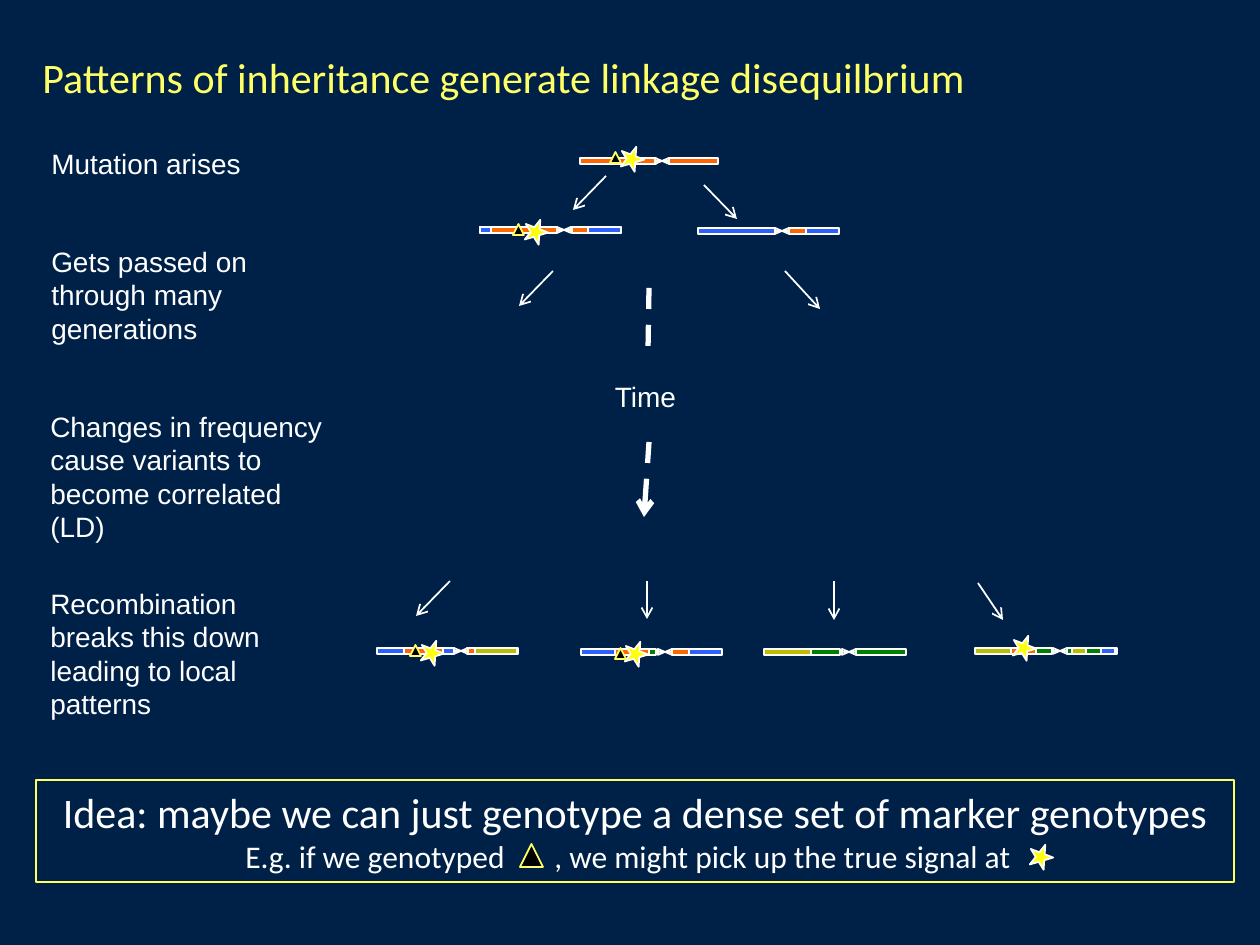
from lxml import etree
from pptx import Presentation
from pptx import util as u
from pptx.dml.color import RGBColor
from pptx.enum import dml, shapes, text
from pptx.oxml.ns import qn

PX = u.Inches(1) / 126
COLORS = {
    "navy": "002147", "white": "FFFFFF", "yellow": "FFFF65", "title": "FFFF66",
    "star": "FFFF0D", "black": "000000", "orange": "FF6600", "blue": "2C60FF",
    "olive": "BBBE00", "green": "008000",
}

TITLE = "Patterns of inheritance generate linkage disequilbrium"
STEPS = [
    ("Mutation arises", (39, 140, 217, 47)),
    ("Gets passed on through many generations", (39, 238, 300, 115)),
    ("Changes in frequency cause variants to become correlated (LD)", (38, 403, 300, 149)),
    ("Recombination breaks this down leading to local patterns", (38, 580, 300, 149)),
]
TIME = ("Time", (602, 373, 87, 47))
IDEA = [
    ("Idea: maybe we can just genotype a dense set of marker genotypes", 24),
    ("\tE.g. if we genotyped\t, we might pick up the true signal at", 18),
]
IDEA_BOX = (36, 780, 1198, 102)
IDEA_TABS = [197, 506]

# top, centromere left, centromere colour, segments as (left, width, colour)
CHROMOSOMES = [
    (158, 655, "orange", [(580, 76, "orange"), (669, 49, "orange")]),
    (227, 557, "orange", [(480, 77, "orange"), (572, 49, "orange"),
                          (588, 33, "blue"), (480, 11, "blue")]),
    (228, 775, "orange", [(789, 49, "orange"), (806, 33, "blue"), (698, 77, "blue")]),
    (648, 454, "orange", [(377, 77, "blue"), (467, 49, "orange"), (404, 39, "orange"),
                          (485, 33, "blue"), (475, 42, "olive")]),
    (649, 658, "orange", [(635, 21, "green"), (615, 34, "orange"), (672, 49, "orange"),
                          (689, 33, "blue"), (581, 34, "blue")]),
    (649, 842, "green", [(764, 48, "olive"), (811, 29, "green"), (856, 50, "green")]),
    (648, 1053, "green", [(975, 48, "olive"), (1023, 29, "green"), (1067, 50, "green"),
                          (1011, 25, "orange"), (1072, 14, "olive"), (1101, 14, "blue")]),
]
BAR_HEIGHT = 6
CENTROMERE = (7, 3)
ARROWS = [
    (606, 176, 573, 210), (704, 185, 737, 219), (553, 271, 519, 306),
    (785, 271, 820, 309), (450, 581, 416, 616), (647, 581, 647, 619),
    (834, 581, 834, 620), (978, 583, 1003, 620),
]
TIME_LINES = [((649, 288, 648, 353), False), ((649, 442, 644, 517), True)]
STARS = [(620, 146), (524, 219), (420, 640), (624, 641), (1012, 635), (1029, 844)]
STAR_SIZE = 24
MARKERS = [(610, 152, 11), (513, 224, 11), (410, 645, 11), (615, 648, 11), (520, 844, 23)]


def emu(*lengths):
    return [u.Emu(round(length * PX)) for length in lengths]


def rgb(name):
    return RGBColor.from_string(COLORS[name])


def add_figure(parent, preset, box, fill, line="white", width=1):
    figure = parent.add_shape(preset, *emu(*box))
    figure.shadow.inherit = False
    if fill:
        figure.fill.solid()
        figure.fill.fore_color.rgb = rgb(fill)
    else:
        figure.fill.background()
    figure.line.color.rgb = rgb(line)
    figure.line.width = u.Pt(width)
    return figure


def add_chromosome(parent, top, center, color, segments):
    chromosome = parent.add_group_shape().shapes
    for left, width, fill in segments:
        add_figure(chromosome, shapes.MSO_SHAPE.RECTANGLE,
                   (left, top, width, BAR_HEIGHT), fill)
    width, height = CENTROMERE
    for column in (0, 1):
        for row in (0, 1):
            box = (center + column * width, top + row * height, width, height)
            wedge = add_figure(chromosome, shapes.MSO_SHAPE.RIGHT_TRIANGLE, box, color)
            xfrm = wedge.element.spPr.find(qn("a:xfrm"))
            xfrm.set("flipH", str(column))
            xfrm.set("flipV", str(row))


def add_line(parent, ends, width=1, dashed=False, arrow=True):
    line = parent.add_connector(shapes.MSO_CONNECTOR.STRAIGHT, *emu(*ends))
    line.line.color.rgb = rgb("white")
    line.line.width = u.Pt(width)
    if dashed:
        line.line.dash_style = dml.MSO_LINE.DASH
    if arrow:
        etree.SubElement(line.line._get_or_add_ln(), qn("a:tailEnd"), type="arrow")
    etree.SubElement(line.element.spPr, qn("a:effectLst"))


def format_text(paragraph, size, font, color):
    for run in paragraph.runs:
        run.font.size = u.Pt(size)
        run.font.name = font
        run.font.color.rgb = rgb(color)


def add_label(parent, words, box, size=16, font="Arial", color="white", wrap=True):
    frame = parent.add_textbox(*emu(*box)).text_frame
    frame.word_wrap = wrap
    frame.text = words
    format_text(frame.paragraphs[0], size, font, color)
    return frame


def add_idea(parent):
    frame = add_figure(parent, shapes.MSO_SHAPE.RECTANGLE, IDEA_BOX, None,
                       "yellow", 0.75).text_frame
    frame.word_wrap = True
    frame.text = "\n".join(words for words, size in IDEA)
    headline, example = frame.paragraphs
    headline.alignment = text.PP_ALIGN.CENTER
    example.alignment = text.PP_ALIGN.LEFT
    stops = etree.SubElement(example._p.get_or_add_pPr(), qn("a:tabLst"))
    for position in emu(*IDEA_TABS):
        etree.SubElement(stops, qn("a:tab"), pos=str(position), algn="l")
    for paragraph, (words, size) in zip(frame.paragraphs, IDEA):
        format_text(paragraph, size, "Calibri", "white")


def main():
    deck = Presentation()
    deck.slide_width, deck.slide_height = u.Inches(10), u.Inches(7.5)
    slide = deck.slides.add_slide(deck.slide_layouts[6])
    slide.background.fill.solid()
    slide.background.fill.fore_color.rgb = rgb("navy")
    canvas = slide.shapes

    title = add_label(canvas, TITLE, (30, 25, 1201, 83), 24, "Calibri", "title")
    title.vertical_anchor = text.MSO_ANCHOR.BOTTOM
    for words, box in STEPS:
        add_label(canvas, words, box)
    time = add_label(canvas, *TIME, wrap=False)
    time.paragraphs[0].alignment = text.PP_ALIGN.CENTER
    add_idea(canvas)

    for chromosome in CHROMOSOMES:
        add_chromosome(canvas, *chromosome)
    for ends in ARROWS:
        add_line(canvas, ends)
    for ends, arrow in TIME_LINES:
        add_line(canvas, ends, 3, True, arrow)
    for left, top in STARS:
        star = add_figure(canvas, shapes.MSO_SHAPE.STAR_5_POINT,
                          (left, top, STAR_SIZE, STAR_SIZE), "star")
        star.rotation = 21
    for left, top, size in MARKERS:
        add_figure(canvas, shapes.MSO_SHAPE.ISOSCELES_TRIANGLE,
                   (left, top, size, size), "black", "yellow")

    deck.save("out.pptx")


if __name__ == "__main__":
    main()
